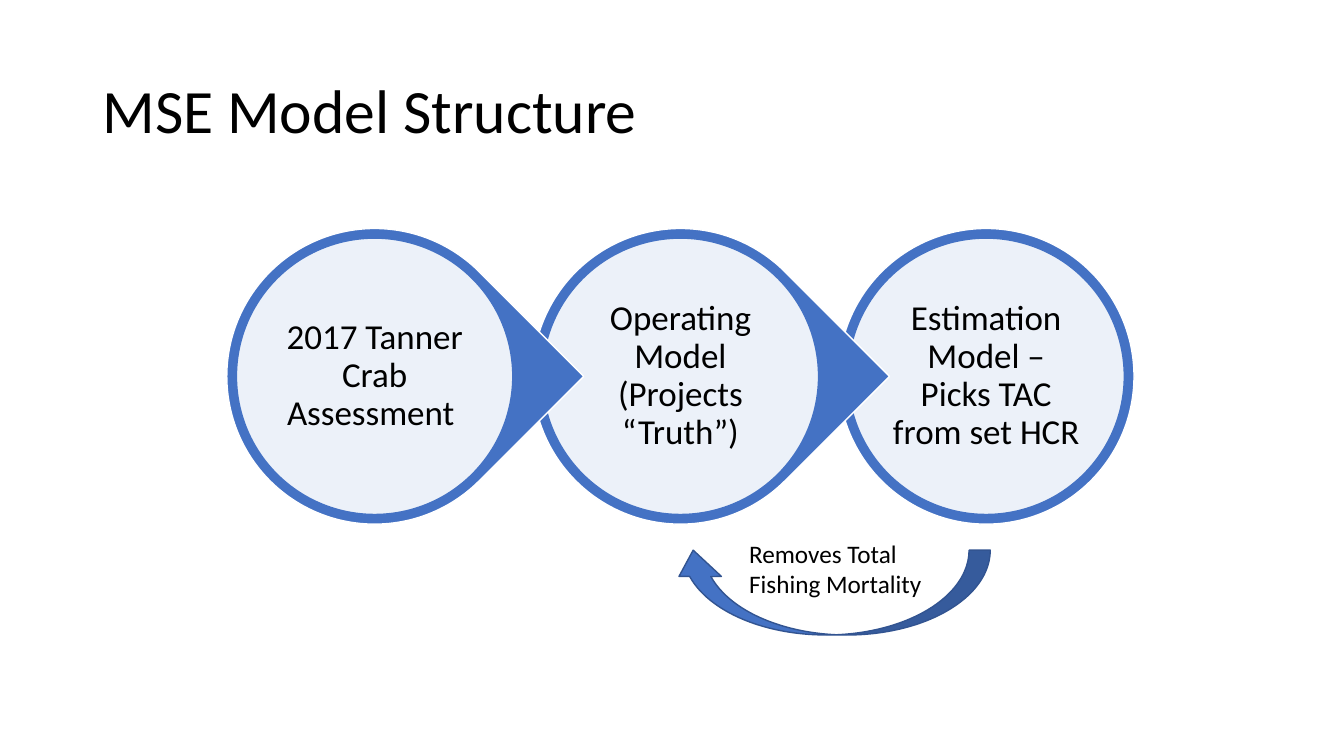
import lxml.etree
import pptx
import pptx.dml.color
import pptx.enum.shapes
import pptx.enum.text
import pptx.oxml.ns
import pptx.util

SHAPE = pptx.enum.shapes.MSO_SHAPE
ALIGN = pptx.enum.text.PP_ALIGN
ANCHOR = pptx.enum.text.MSO_ANCHOR
COLS, ROWS = 160, 90


def rgb(value):
    return pptx.dml.color.RGBColor.from_string(value)


class Deck:
    """Holds the style and current slide, placing elements on a grid of columns and rows."""

    font = "Calibri"
    ink = "000000"
    accent = "4472C4"
    accent_dark = "325491"
    paper = "FFFFFF"

    def __init__(self):
        self.prs = pptx.Presentation()
        self.prs.slide_width = pptx.util.Inches(13.33)
        self.prs.slide_height = pptx.util.Inches(7.5)
        self.s = self.prs.slides.add_slide(self.prs.slide_layouts[6])

    def box(self, left, top, width, height):
        col = self.prs.slide_width / COLS
        row = self.prs.slide_height / ROWS
        return int(left * col), int(top * row), int(width * col), int(height * row)

    def text(self, box, words, size, align=ALIGN.LEFT, anchor=ANCHOR.TOP, spacing=1.0, inset=None):
        tf = self.s.shapes.add_textbox(*self.box(*box)).text_frame
        tf.word_wrap = True
        tf.vertical_anchor = anchor
        if inset is not None:
            tf.margin_left = tf.margin_right = pptx.util.Inches(inset)
            tf.margin_top = tf.margin_bottom = pptx.util.Inches(inset)
        p = tf.paragraphs[0]
        p.text = words
        p.alignment = align
        p.line_spacing = spacing
        p.font.name = self.font
        p.font.size = pptx.util.Pt(size)
        p.font.color.rgb = rgb(self.ink)

    def shape(self, kind, box, fill, line, alpha=None):
        sp = self.s.shapes.add_shape(kind, *self.box(*box))
        sp.shadow.inherit = False
        sp.fill.solid()
        sp.fill.fore_color.rgb = rgb(fill)
        sp.line.color.rgb = rgb(line)
        sp.line.width = pptx.util.Pt(1)
        if alpha is not None:
            qn = pptx.oxml.ns.qn
            color = sp._element.spPr.find(qn("a:solidFill")).find(qn("a:srgbClr"))
            lxml.etree.SubElement(color, qn("a:alpha")).set("val", str(alpha * 1000))
        return sp

    def stage(self, center_x, center_y, words, pointed):
        def square(size):
            return center_x - size / 2, center_y - size / 2, size, size

        kind = SHAPE.TEAR if pointed else SHAPE.OVAL
        ring = self.shape(kind, square(35.2), self.accent, self.paper)
        if pointed:
            ring.rotation = 45
        self.shape(SHAPE.OVAL, square(32.9), self.paper, self.accent, alpha=90)
        self.text(square(23.5), words, 25, ALIGN.CENTER, ANCHOR.MIDDLE, 0.9, 0.03)

    def return_arrow(self, box):
        sp = self.shape(SHAPE.CURVED_UP_ARROW, box, self.accent, self.accent_dark)
        for i, value in enumerate((0.25, 0.5, 0.31)):
            sp.adjustments[i] = value
        sp._element.spPr.xfrm.set("flipH", "1")


def main():
    deck = Deck()
    deck.text((11, 4.8, 138, 17.4), "MSE Model Structure", 44, anchor=ANCHOR.MIDDLE, spacing=0.9)
    stages = [
        "2017 Tanner Crab Assessment ",
        "Operating Model (Projects “Truth”)",
        "Estimation Model – Picks TAC from set HCR ",
    ]
    last = len(stages) - 1
    for i in range(last, -1, -1):
        deck.stage(44.6 + 36.4 * i, 44.8, stages[i], pointed=i < last)
    deck.return_arrow((80, 65.5, 37.9, 10.1))
    deck.text((88, 63.5, 24.2, 8.5), "Removes Total Fishing Mortality", 18)
    deck.prs.save("out.pptx")


if __name__ == "__main__":
    main()
